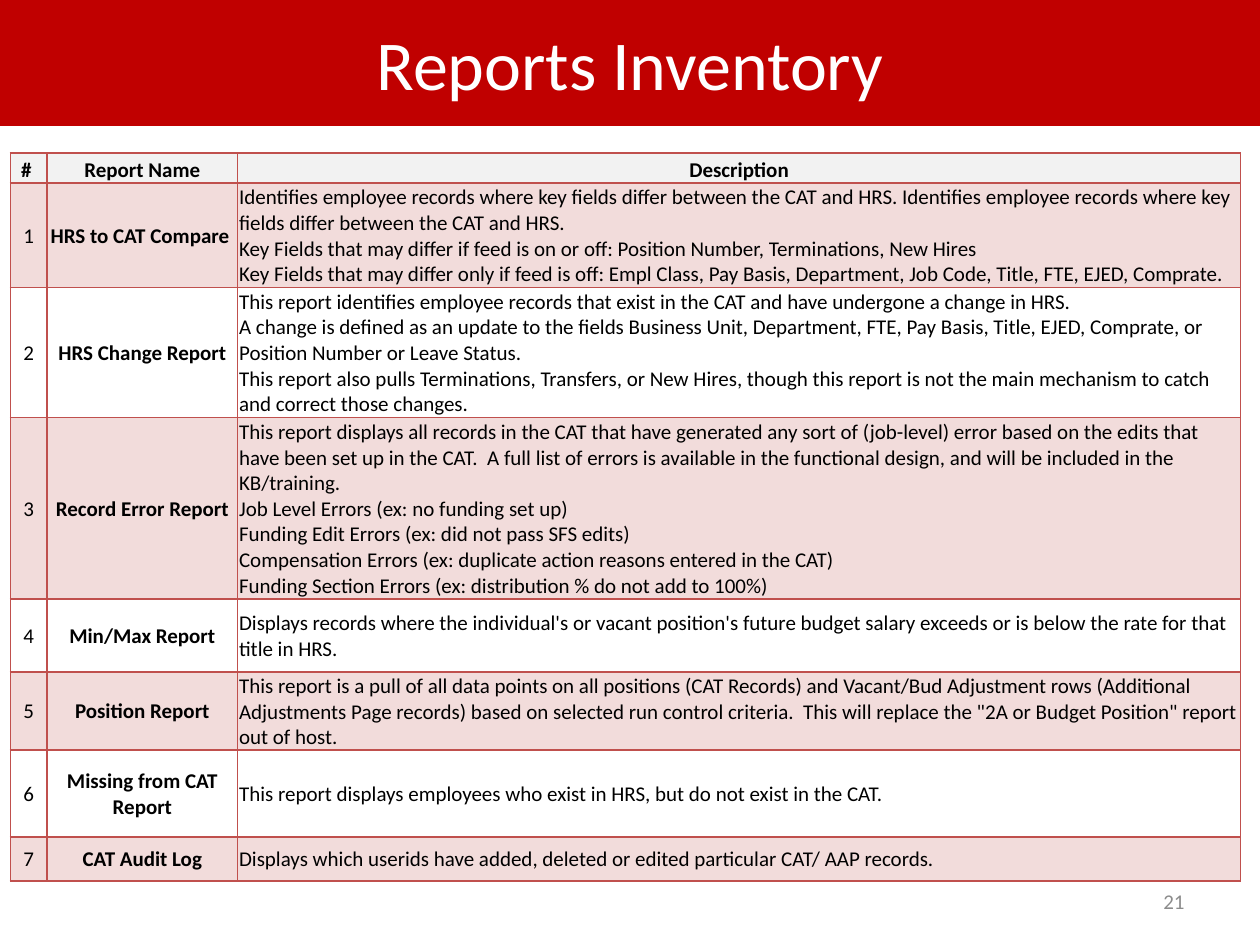
from copy import deepcopy
from dataclasses import dataclass

from lxml import etree
from pptx import Presentation
from pptx.dml.color import RGBColor
from pptx.enum import shapes, text
from pptx.oxml.ns import qn
from pptx.util import Cm, Pt


@dataclass(frozen=True)
class Theme:
    font: str = "Calibri"
    banner: str = "C00000"
    border: str = "C0504D"
    header: str = "F2F2F2"
    band: str = "F2DCDB"
    ink: str = "000000"
    light: str = "FFFFFF"
    muted: str = "8C8C8C"
    title_size: int = 40
    body_size: int = 12
    border_width: int = 1


@dataclass(frozen=True)
class Report:
    name: str
    height: float
    lines: tuple[str, ...]


THEME = Theme()
CENTER, LEFT, RIGHT = text.PP_ALIGN.CENTER, text.PP_ALIGN.LEFT, text.PP_ALIGN.RIGHT
MIDDLE, BOTTOM = text.MSO_ANCHOR.MIDDLE, text.MSO_ANCHOR.BOTTOM
COLUMN_WIDTHS = (0.74, 3.84, 20.22)
HEADINGS = ("# ", "Report Name", "Description")
HEADER_HEIGHT = 0.61
CELL_FORMAT = {"margin_left": Cm(0.03), "margin_right": Cm(0.03),
               "margin_top": Cm(0.03), "margin_bottom": Cm(0)}

REPORTS = (
    Report("HRS to CAT Compare ", 2.11, (
        "Identifies employee records where key fields differ between the CAT and HRS. "
        "Identifies employee records where key fields differ between the CAT and HRS. ",
        "Key Fields that may differ if feed is on or off: Position Number, Terminations, New Hires",
        "Key Fields that may differ only if feed is off: Empl Class, Pay Basis, Department, "
        "Job Code, Title, FTE, EJED, Comprate.")),
    Report("HRS Change Report", 2.62, (
        "This report identifies employee records that exist in the CAT and have undergone "
        "a change in HRS. ",
        "A change is defined as an update to the fields Business Unit, Department, FTE, "
        "Pay Basis, Title, EJED, Comprate, or Position Number or Leave Status. ",
        "This report also pulls Terminations, Transfers, or New Hires, though this report "
        "is not the main mechanism to catch and correct those changes.")),
    Report("Record Error Report", 3.66, (
        "This report displays all records in the CAT that have generated any sort of "
        "(job-level) error based on the edits that have been set up in the CAT.  A full list "
        "of errors is available in the functional design, and will be included in the "
        "KB/training. ",
        "Job Level Errors (ex: no funding set up)",
        "Funding Edit Errors (ex: did not pass SFS edits)",
        "Compensation Errors (ex: duplicate action reasons entered in the CAT)",
        "Funding Section Errors (ex: distribution % do not add to 100%)")),
    Report("Min/Max Report", 1.47, (
        "Displays records where the individual's or vacant position's future budget salary "
        "exceeds or is below the rate for that title in HRS.",)),
    Report("Position Report", 1.57, (
        "This report is a pull of all data points on all positions (CAT Records) and "
        "Vacant/Bud Adjustment rows (Additional Adjustments Page records) based on selected "
        "run control criteria.  This will replace the \"2A or Budget Position\" report "
        "out of host.",)),
    Report("Missing from CAT Report", 1.75, (
        "This report displays employees who exist in HRS, but do not exist in the CAT.",)),
    Report("CAT Audit Log", 0.89, (
        "Displays which userids have added, deleted or edited particular CAT/ AAP records.",)),
)


def write(frame, words: str, align, color: str = THEME.ink,
          size: int = THEME.body_size, bold: bool = False) -> None:
    """Write one paragraph; line breaks take the same format as the text."""
    para = frame.paragraphs[0]
    para.text = words
    para.alignment = align
    for span in para.runs:
        for name, value in {"name": THEME.font, "size": Pt(size), "bold": bold}.items():
            setattr(span.font, name, value)
        span.font.color.rgb = RGBColor.from_string(color)
    span_format = para.runs[0]._r.rPr
    for line_break in para._p.findall(qn("a:br")):
        line_break.insert(0, deepcopy(span_format))


def add_borders(cell) -> None:
    properties = cell._tc.get_or_add_tcPr()
    for side in ("a:lnL", "a:lnR", "a:lnT", "a:lnB"):
        line = etree.SubElement(properties, qn(side), w=str(Pt(THEME.border_width)))
        fill = etree.SubElement(line, qn("a:solidFill"))
        etree.SubElement(fill, qn("a:srgbClr"), val=THEME.border)


def fill_cell(cell, words: str, align, anchor, fill: str | None, bold: bool) -> None:
    add_borders(cell)
    for name, value in CELL_FORMAT.items():
        setattr(cell, name, value)
    cell.vertical_anchor = anchor
    if fill:
        cell.fill.solid()
        cell.fill.fore_color.rgb = RGBColor.from_string(fill)
    else:
        cell.fill.background()
    write(cell.text_frame, words, align, bold=bold)


def add_banner(page, width: int) -> None:
    banner = page.shapes.add_shape(shapes.MSO_SHAPE.RECTANGLE, 0, 0, width, Cm(2.54))
    banner.shadow.inherit = False
    banner.fill.solid()
    banner.fill.fore_color.rgb = RGBColor.from_string(THEME.banner)
    banner.line.fill.background()
    banner.text_frame.vertical_anchor = MIDDLE
    write(banner.text_frame, "Reports Inventory", CENTER, THEME.light, THEME.title_size)


def add_page_number(page, number: str) -> None:
    box = page.shapes.add_textbox(Cm(18.2), Cm(17.65), Cm(5.93), Cm(1.02))
    box.text_frame.word_wrap = True
    box.text_frame.vertical_anchor = MIDDLE
    write(box.text_frame, number, RIGHT, THEME.muted)


def add_report_table(page) -> None:
    heights = [HEADER_HEIGHT, *(report.height for report in REPORTS)]
    table = page.shapes.add_table(
        len(heights), len(COLUMN_WIDTHS), Cm(0.21), Cm(3.08),
        Cm(sum(COLUMN_WIDTHS)), Cm(sum(heights))).table
    for column, width in zip(table.columns, COLUMN_WIDTHS):
        column.width = Cm(width)
    for row, height in zip(table.rows, heights):
        row.height = Cm(height)
    for column, heading in enumerate(HEADINGS):
        fill_cell(table.cell(0, column), heading, CENTER, BOTTOM, THEME.header, True)
    for number, report in enumerate(REPORTS, start=1):
        fill = THEME.band if number % 2 else None
        columns = ((str(number), CENTER, False), (report.name, CENTER, True),
                   ("\v".join(report.lines), LEFT, False))
        for column, (words, align, bold) in enumerate(columns):
            fill_cell(table.cell(number, column), words, align, MIDDLE, fill, bold)


def main() -> None:
    deck = Presentation()
    deck.slide_width, deck.slide_height = Cm(25.4), Cm(19.05)
    page = deck.slides.add_slide(deck.slide_layouts[6])
    add_page_number(page, "21")
    add_banner(page, deck.slide_width)
    add_report_table(page)
    deck.save("out.pptx")


if __name__ == "__main__":
    main()
